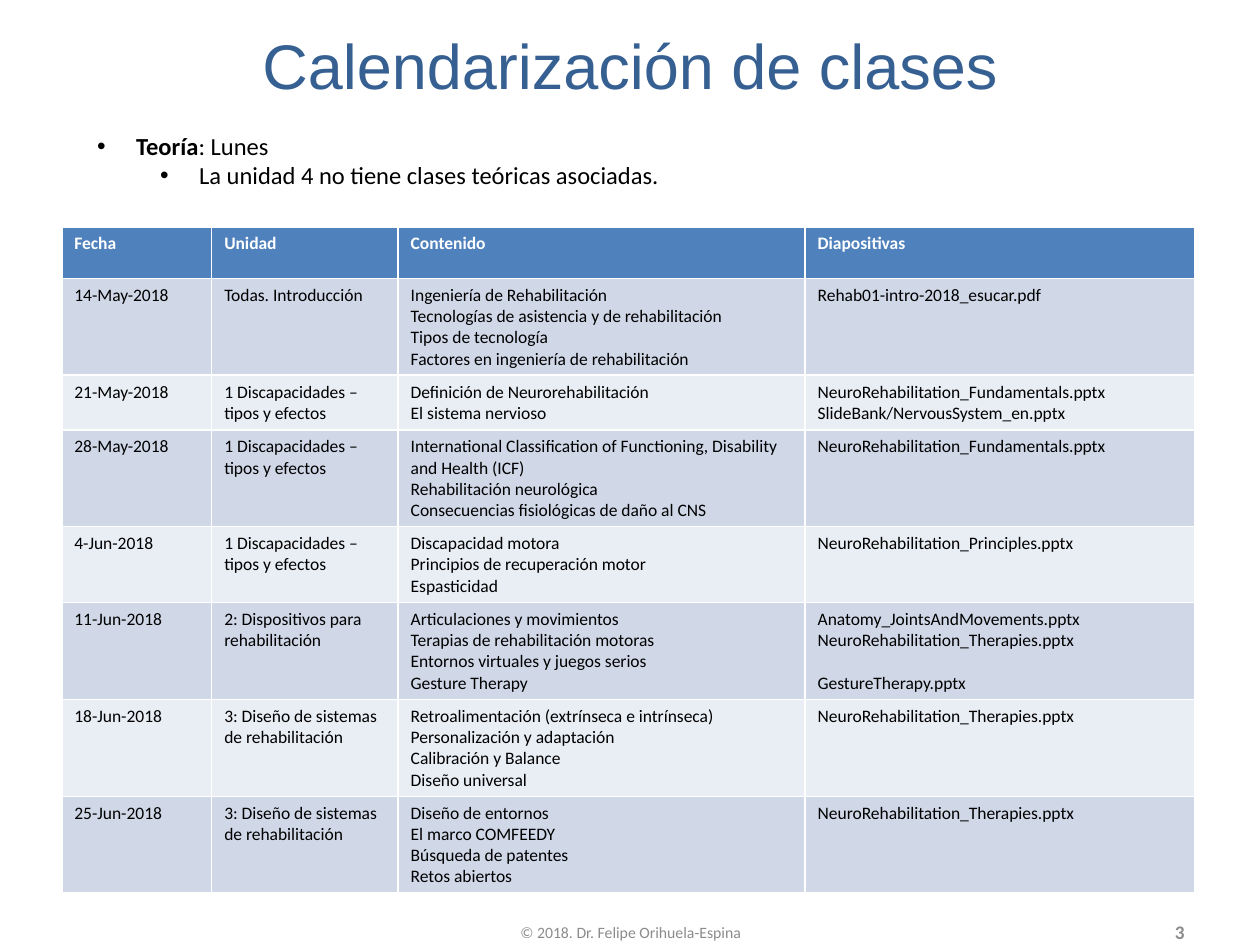
"""Build the class calendar slide."""
import pptx
import pptx.dml.color
import pptx.enum.text
import pptx.oxml.ns
import pptx.util
from lxml import etree

Inches = pptx.util.Inches
Pt = pptx.util.Pt
RGBColor = pptx.dml.color.RGBColor
ALIGN = pptx.enum.text.PP_ALIGN
ANCHOR = pptx.enum.text.MSO_ANCHOR

WHITE = RGBColor(0xFF, 0xFF, 0xFF)
BLACK = RGBColor(0, 0, 0)
NAVY = RGBColor(0x37, 0x60, 0x92)
GREY = RGBColor(0x8C, 0x8C, 0x8C)
HEADER = RGBColor(0x4F, 0x81, 0xBD)
BANDS = (RGBColor(0xE9, 0xED, 0xF4), RGBColor(0xD0, 0xD8, 0xE8))

TITLE = {"name": "Arial", "size": Pt(36), "color": NAVY}
LIST = {"name": "Calibri", "size": Pt(14), "color": BLACK, "bold": False}
CELL = {**LIST, "size": Pt(10)}
HEAD = {**CELL, "color": WHITE, "bold": True}
FOOTER = {"name": "Calibri", "size": Pt(9), "color": GREY}
NUMBER = {**FOOTER, "size": Pt(11), "bold": True}

EFFECTS = "1 Discapacidades – tipos y efectos"
DESIGN = "3: Diseño de sistemas de rehabilitación"
FUNDAMENTALS = "NeuroRehabilitation_Fundamentals.pptx"
THERAPIES = "NeuroRehabilitation_Therapies.pptx"
SKIPPED_LINE = "GestureTherapy.pptx"

CLASSES = [
    ("Fecha", "Unidad", "Contenido", "Diapositivas"),
    ("14-May-2018", "Todas. Introducción",
     "Ingeniería de Rehabilitación\nTecnologías de asistencia y de rehabilitación\n"
     "Tipos de tecnología\nFactores en ingeniería de rehabilitación",
     "Rehab01-intro-2018_esucar.pdf"),
    ("21-May-2018", EFFECTS,
     "Definición de Neurorehabilitación\nEl sistema nervioso",
     f"{FUNDAMENTALS}\nSlideBank/NervousSystem_en.pptx"),
    ("28-May-2018", EFFECTS,
     "International Classification of Functioning, Disability and Health (ICF)\n"
     "Rehabilitación neurológica\nConsecuencias fisiológicas de daño al CNS",
     FUNDAMENTALS),
    ("4-Jun-2018", EFFECTS,
     "Discapacidad motora\nPrincipios de recuperación motor\nEspasticidad",
     "NeuroRehabilitation_Principles.pptx"),
    ("11-Jun-2018", "2: Dispositivos para rehabilitación",
     "Articulaciones y movimientos\nTerapias de rehabilitación motoras\n"
     "Entornos virtuales y juegos serios\nGesture Therapy",
     f"Anatomy_JointsAndMovements.pptx\n{THERAPIES}\n{SKIPPED_LINE}"),
    ("18-Jun-2018", DESIGN,
     "Retroalimentación (extrínseca e intrínseca)\nPersonalización y adaptación\n"
     "Calibración y Balance\nDiseño universal",
     THERAPIES),
    ("25-Jun-2018", DESIGN,
     "Diseño de entornos\nEl marco COMFEEDY\nBúsqueda de patentes\nRetos abiertos",
     THERAPIES),
]


class SlideBuilder:
    """Hold the current slide and its text style."""

    def __init__(self, slide):
        self.slide = slide

    def add_text(self, paragraph, text, style):
        """Add a formatted run."""
        run = paragraph.add_run()
        run.text = text
        for key, value in style.items():
            if key == "color":
                run.font.color.rgb = value
            else:
                setattr(run.font, key, value)

    def place(self, shape, box):
        """Move a shape to a box given in inches."""
        for key, value in zip(("left", "top", "width", "height"), box):
            setattr(shape, key, Inches(value))

    def title(self, text, box):
        """Fill the title placeholder."""
        heading = self.slide.shapes.title
        self.place(heading, box)
        heading.text_frame.auto_size = pptx.enum.text.MSO_AUTO_SIZE.NONE
        heading.text_frame.vertical_anchor = ANCHOR.MIDDLE
        paragraph = heading.text_frame.paragraphs[0]
        paragraph.alignment = ALIGN.CENTER
        self.add_text(paragraph, text, TITLE)

    def bullets(self, items, box):
        """Fill the body placeholder with (level, indent, runs) items."""
        body = self.slide.placeholders[1]
        self.place(body, box)
        frame = body.text_frame
        frame.auto_size = pptx.enum.text.MSO_AUTO_SIZE.SHAPE_TO_FIT_TEXT
        for index, (level, indent, runs) in enumerate(items):
            paragraph = frame.add_paragraph() if index else frame.paragraphs[0]
            paragraph.level = level
            properties = paragraph._p.get_or_add_pPr()
            properties.set("marL", str(Inches(indent)))
            properties.set("indent", str(Inches(-0.31)))
            for tag, key, value in (("a:buFont", "typeface", "Arial"), ("a:buChar", "char", "•")):
                etree.SubElement(properties, pptx.oxml.ns.qn(tag)).set(key, value)
            paragraph.space_before = Pt(0)
            for text, bold in runs:
                self.add_text(paragraph, text, {**LIST, "bold": bold})

    def table(self, rows, widths, row_height, box):
        """Add a banded table with a coloured header."""
        frame = self.slide.shapes.add_table(len(rows), len(widths), *map(Inches, box))
        for column, width in zip(frame.table.columns, widths):
            column.width = Inches(width)
        for index, (row, texts) in enumerate(zip(frame.table.rows, rows)):
            row.height = Inches(row_height)
            for cell, text in zip(row.cells, texts):
                cell.fill.solid()
                cell.fill.fore_color.rgb = BANDS[index % 2] if index else HEADER
                self.cell_text(cell.text_frame, text, CELL if index else HEAD)
        self.place(frame, box)

    def cell_text(self, frame, text, style):
        """Fill a cell with one paragraph per line."""
        for index, line in enumerate(text.split("\n")):
            paragraph = frame.add_paragraph() if index else frame.paragraphs[0]
            if line == SKIPPED_LINE:
                paragraph.space_before = Pt(12.2)
            self.add_text(paragraph, line, style)

    def label(self, text, box, alignment, style):
        """Add a vertically centred text box."""
        frame = self.slide.shapes.add_textbox(*map(Inches, box)).text_frame
        frame.word_wrap = True
        frame.vertical_anchor = ANCHOR.MIDDLE
        frame.paragraphs[0].alignment = alignment
        self.add_text(frame.paragraphs[0], text, style)


def main():
    """Build and save the presentation."""
    deck = pptx.Presentation()
    deck.slide_width, deck.slide_height = Inches(10), Inches(7.5)
    builder = SlideBuilder(deck.slides.add_slide(deck.slide_layouts[1]))
    builder.title("Calendarización de clases", (0.51, 0.05, 8.98, 0.92))
    builder.bullets([
        (0, 0.31, [("Teoría", True), (": Lunes", False)]),
        (1, 0.81, [("La unidad 4 no tiene clases teóricas asociadas.", False)]),
    ], (0.67, 0.99, 8.98, 0.57))
    builder.table(CLASSES, (1.19, 1.48, 3.23, 3.09), 0.41, (0.49, 1.8, 9, 5.27))
    builder.label("© 2018. Dr. Felipe Orihuela-Espina", (3.42, 7.29, 3.17, 0.21),
                  ALIGN.CENTER, FOOTER)
    builder.label("3", (7.17, 7.29, 2.33, 0.21), ALIGN.RIGHT, NUMBER)
    deck.save("out.pptx")


if __name__ == "__main__":
    main()
